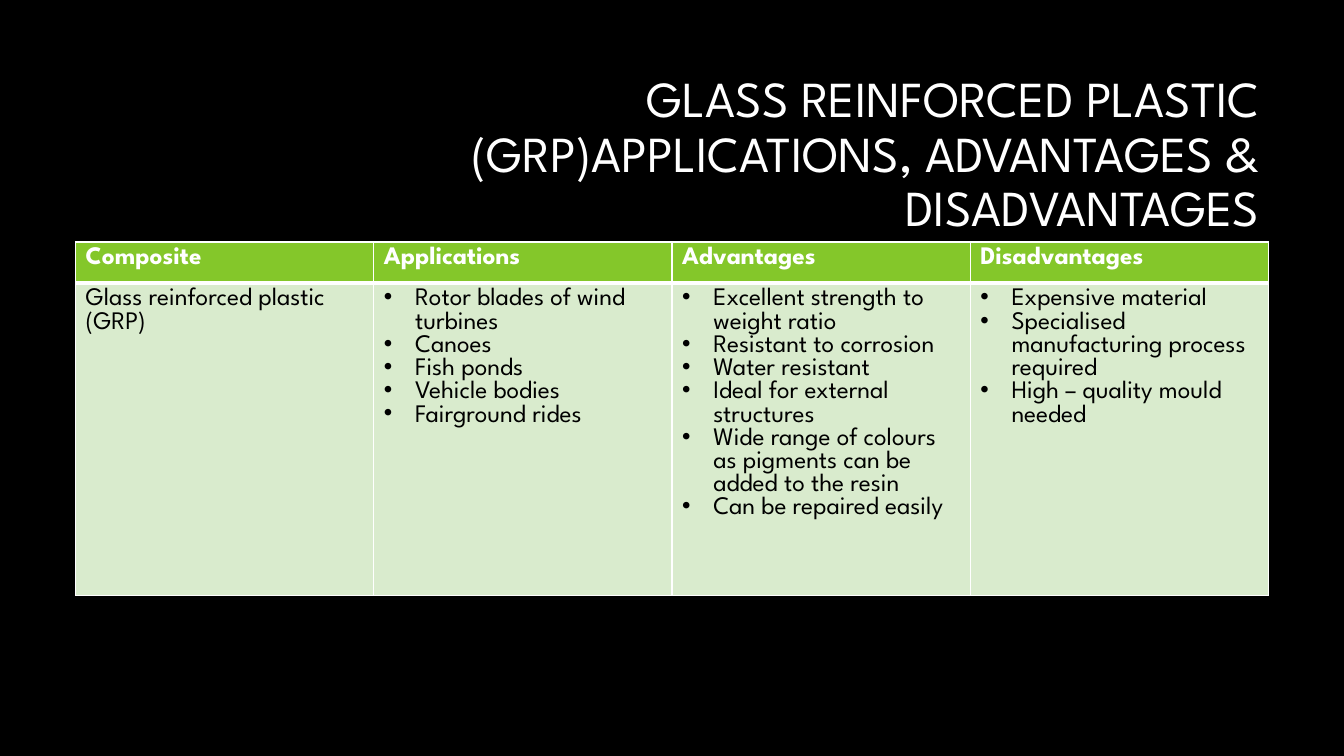
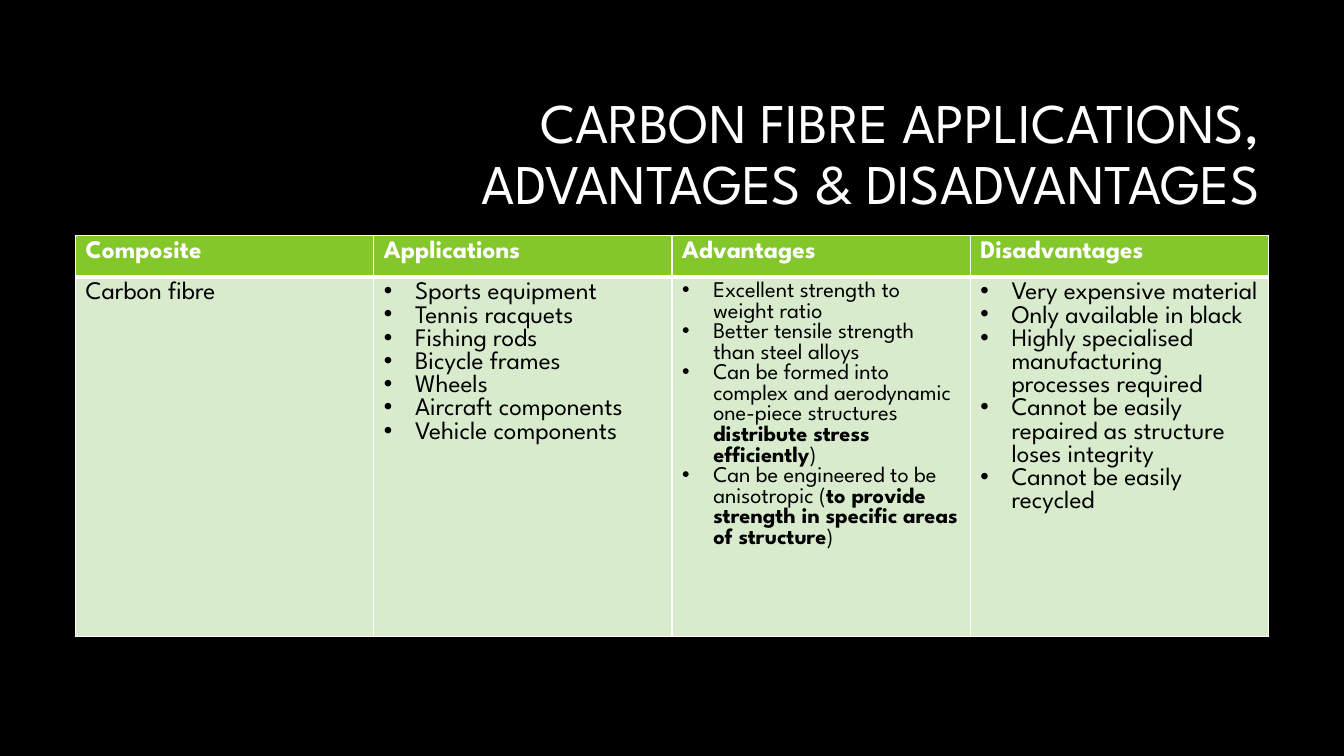
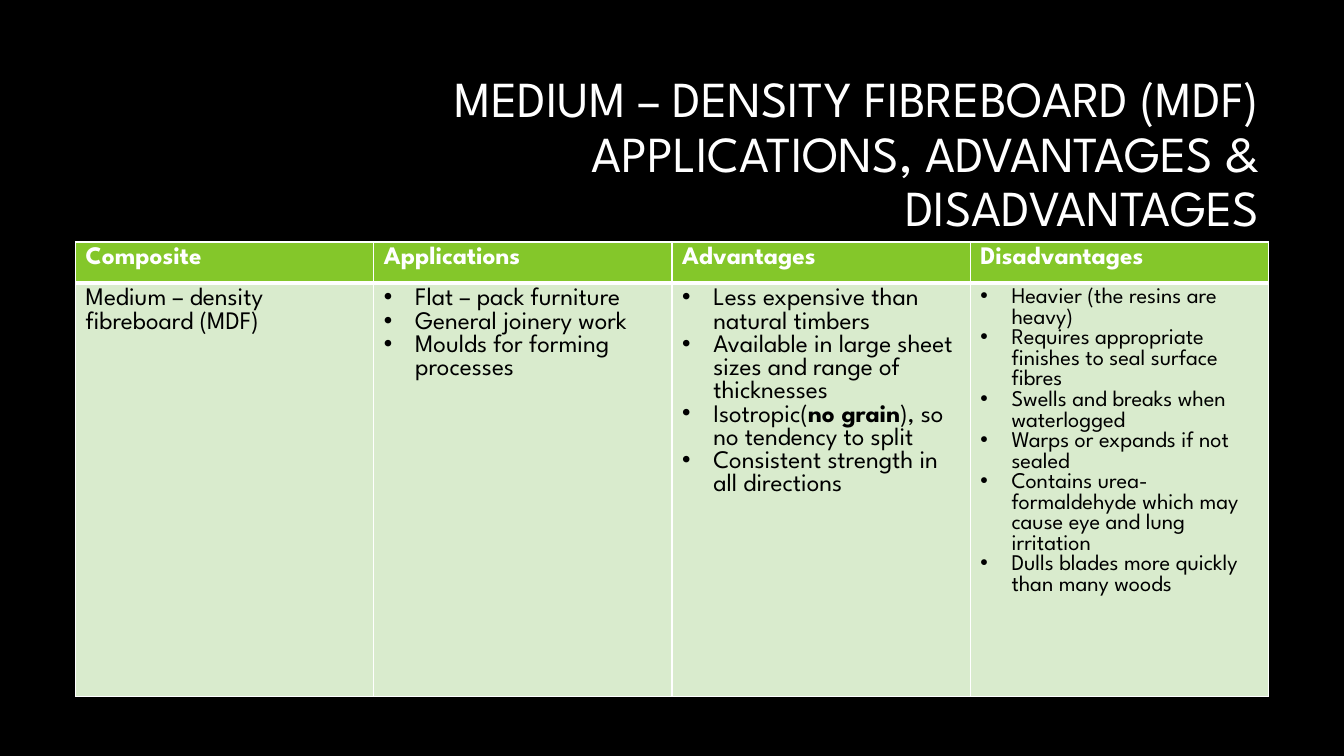
import pptx
import pptx.util
import pptx.dml.color
import pptx.enum.text
import pptx.oxml
from lxml import etree

Inches, Pt = pptx.util.Inches, pptx.util.Pt
ALIGN, ANCHOR = pptx.enum.text.PP_ALIGN, pptx.enum.text.MSO_ANCHOR

WIDE, HIGH = 13.33, 7.5
FONT = "League Spartan"
BLACK, WHITE, GREEN, PALE = "000000", "FFFFFF", "84C72A", "D9EBCD"
TITLE_BOX = (3.17, 0.84, 9.42, 1.41)
SIDE, HEAD_ROW = 0.75, 0.41
THIN, THICK = 1, 3
INDENT = 0.31

HEADS = ["Composite", "Applications", "Advantages", "Disadvantages"]

# Each column is (text size, bullets); words between ** marks are bold.
SLIDES = [
    dict(
        title="GLASS REINFORCED PLASTIC (GRP)APPLICATIONS, ADVANTAGES & DISADVANTAGES",
        size=36, top=2.4, row=2.4,
        name="Glass reinforced plastic (GRP)",
        lists=[
            (18, ["Rotor blades of wind turbines", "Canoes", "Fish ponds",
                  "Vehicle bodies", "Fairground rides"]),
            (18, ["Excellent strength to weight ratio", "Resistant to corrosion",
                  "Water resistant", "Ideal for external structures",
                  "Wide range of colours as pigments can be added to the resin",
                  "Can be repaired easily"]),
            (18, ["Expensive material",
                  "Specialised manufacturing process required",
                  "High – quality mould needed"]),
        ]),
    dict(
        title="CARBON FIBRE APPLICATIONS, ADVANTAGES & DISADVANTAGES",
        size=40, top=2.34, row=2.97,
        name="Carbon fibre",
        lists=[
            (18, ["Sports equipment", "Tennis racquets", "Fishing rods",
                  "Bicycle frames", "Wheels", "Aircraft components",
                  "Vehicle components"]),
            (16, ["Excellent strength to weight ratio",
                  "Better tensile strength than steel alloys",
                  "Can be formed into complex and aerodynamic one-piece "
                  "structures **distribute stress efficiently**)",
                  "Can be engineered to be anisotropic (**to provide strength "
                  "in specific areas of structure**)"]),
            (18, ["Very expensive material", "Only available in black",
                  "Highly specialised manufacturing processes required",
                  "Cannot be easily repaired as structure loses integrity",
                  "Cannot be easily recycled"]),
        ]),
    dict(
        title="MEDIUM – DENSITY FIBREBOARD (MDF) APPLICATIONS, ADVANTAGES & DISADVANTAGES",
        size=36, top=2.4, row=3.15,
        name="Medium – density fibreboard (MDF)",
        lists=[
            (18, ["Flat – pack furniture", "General joinery work",
                  "Moulds for forming processes"]),
            (18, ["Less expensive than natural timbers",
                  "Available in large sheet sizes and range of thicknesses",
                  "Isotropic(**no grain**), so no tendency to split",
                  "Consistent strength in all directions"]),
            (16, ["Heavier (the resins are heavy)",
                  "Requires appropriate finishes to seal surface fibres",
                  "Swells and breaks when waterlogged",
                  "Warps or expands if not sealed",
                  "Contains urea-formaldehyde which may cause eye and lung irritation",
                  "Dulls blades more quickly than many woods"]),
        ]),
]


def paint(fill, color):
    fill.solid()
    fill.fore_color.rgb = pptx.dml.color.RGBColor.from_string(color)


def write(frame, lines, size=18, color=BLACK, bold=False, bullet=False,
          align=ALIGN.LEFT, space=None):
    frame.word_wrap = True
    for i, line in enumerate(lines):
        para = frame.add_paragraph() if i else frame.paragraphs[0]
        if bullet:
            props = para._p.get_or_add_pPr()
            props.set("marL", str(Inches(INDENT)))
            props.set("indent", str(-Inches(INDENT)))
            mark = etree.SubElement(props, pptx.oxml.ns.qn("a:buChar"))
            mark.set("char", "•")
        para.alignment = align
        if space:
            para.line_spacing = space
        for j, part in enumerate(line.split("**")):
            run = para.add_run()
            run.text = part
            run.font.name, run.font.size = FONT, Pt(size)
            run.font.bold = bold or j % 2 == 1
            paint(run.font.fill, color)


def edge(cell, **widths):
    """Draw white cell borders; sides come in the order L, R, T, B."""
    props = cell._tc.get_or_add_tcPr()
    for side, width in widths.items():
        props.append(pptx.oxml.parse_xml(
            f'<a:ln{side} {pptx.oxml.ns.nsdecls("a")} w="{Pt(width)}">'
            f'<a:solidFill><a:srgbClr val="{WHITE}"/></a:solidFill></a:ln{side}>'))


def add_grid(slide, data):
    rows = [HEAD_ROW, data["row"]]
    grid = slide.shapes.add_table(
        2, len(HEADS), Inches(SIDE), Inches(data["top"]),
        Inches(WIDE - 2 * SIDE), Inches(sum(rows))).table
    for row, height in zip(grid.rows, rows):
        row.height = Inches(height)
    body = [(18, [data["name"]])] + data["lists"]
    for col, (head, (size, lines)) in enumerate(zip(HEADS, body)):
        top, low = grid.cell(0, col), grid.cell(1, col)
        edge(top, L=THIN, R=THIN, T=THIN, B=THICK)
        edge(low, L=THIN, R=THIN, T=THICK, B=THIN)
        paint(top.fill, GREEN)
        paint(low.fill, PALE)
        write(top.text_frame, [head], color=WHITE, bold=True)
        write(low.text_frame, lines, size=size, bullet=col > 0)


def add_title(slide, text, size):
    frame = slide.shapes.add_textbox(*map(Inches, TITLE_BOX)).text_frame
    frame.vertical_anchor = ANCHOR.MIDDLE
    write(frame, [text], size=size, color=WHITE, align=ALIGN.RIGHT, space=0.9)


def main():
    deck = pptx.Presentation()
    deck.slide_width, deck.slide_height = Inches(WIDE), Inches(HIGH)
    paint(deck.slide_master.background.fill, BLACK)
    for data in SLIDES:
        slide = deck.slides.add_slide(deck.slide_layouts[6])
        add_title(slide, data["title"], data["size"])
        add_grid(slide, data)
    deck.save("out.pptx")


if __name__ == "__main__":
    main()
